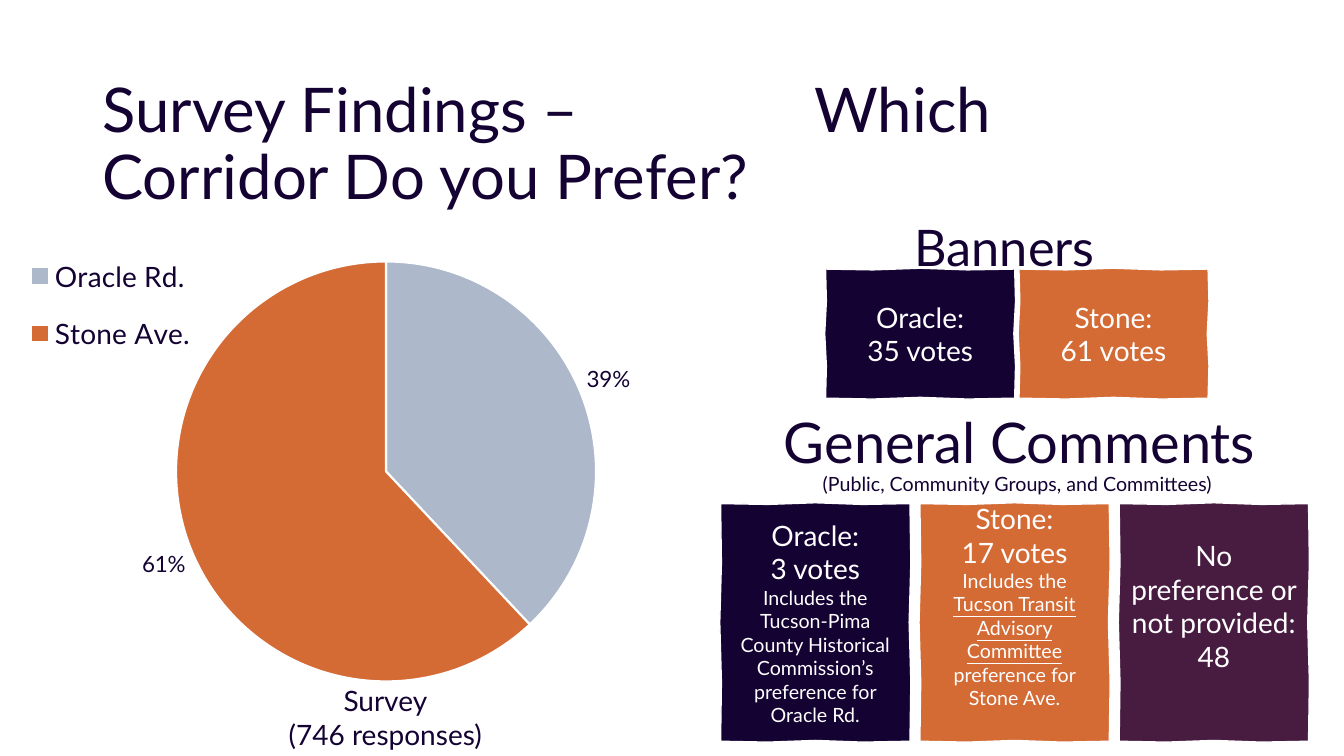
from lxml.etree import SubElement
from pptx import Presentation
from pptx.chart.data import CategoryChartData
from pptx.dml.color import RGBColor
from pptx.enum.chart import XL_CHART_TYPE, XL_LABEL_POSITION, XL_LEGEND_POSITION
from pptx.enum.text import MSO_ANCHOR, PP_ALIGN
from pptx.oxml import parse_xml
from pptx.oxml.ns import nsdecls, qn
from pptx.util import Pt

NAVY = RGBColor(0x14, 0x02, 0x33)
ORANGE = RGBColor(0xD4, 0x6A, 0x34)
PLUM = RGBColor(0x48, 0x1C, 0x41)
GREY_BLUE = RGBColor(0xAD, 0xB9, 0xCA)
WHITE = RGBColor(0xFF, 0xFF, 0xFF)
FONT = "Lato"


def style_font(font, size, color):
    font.name = FONT
    font.size = Pt(size)
    font.color.rgb = color


def add_run(paragraph, text, size, color, underline=False):
    run = paragraph.add_run()
    run.text = text
    style_font(run.font, size, color)
    if underline:
        run.font.underline = True


def fill_lines(frame, lines, color):
    for index, runs in enumerate(lines):
        paragraph = frame.paragraphs[0] if index == 0 else frame.add_paragraph()
        paragraph.alignment = PP_ALIGN.CENTER
        for text, *look in runs:
            first, *rest = text.split("\n")
            add_run(paragraph, first, look[0], color, *look[1:])
            for line in rest:
                paragraph.add_line_break()
                add_run(paragraph, line, look[0], color, *look[1:])


def add_title(slide, left, top, width, height):
    title = slide.shapes.title
    title.left, title.top = Pt(left), Pt(top)
    title.width, title.height = Pt(width), Pt(height)
    frame = title.text_frame
    frame.word_wrap = True
    frame.vertical_anchor = MSO_ANCHOR.MIDDLE
    paragraph = frame.paragraphs[0]
    paragraph.alignment = PP_ALIGN.LEFT
    paragraph.line_spacing = 0.9
    stops = SubElement(paragraph._p.get_or_add_pPr(), qn("a:tabLst"))
    SubElement(stops, qn("a:tab"), pos=str(Pt(508.5)), algn="l")
    add_run(paragraph, "Survey Findings –\tWhich Corridor Do you Prefer?", 44, NAVY)


def add_label(slide, left, top, width, height, lines, spacing=1.0):
    label = slide.shapes.add_textbox(Pt(left), Pt(top), Pt(width), Pt(height))
    label.text_frame.word_wrap = True
    fill_lines(label.text_frame, lines, NAVY)
    for paragraph in label.text_frame.paragraphs:
        paragraph.line_spacing = spacing


def set_layout(parent, following, part, chart_size, target=""):
    left, top, width, height = part
    chart_width, chart_height = chart_size
    for old in parent.findall(qn("c:layout")):
        parent.remove(old)
    parent.find(qn(following)).addprevious(parse_xml(
        f'<c:layout {nsdecls("c")}><c:manualLayout>{target}'
        '<c:xMode val="edge"/><c:yMode val="edge"/>'
        f'<c:x val="{left / chart_width}"/><c:y val="{top / chart_height}"/>'
        f'<c:w val="{width / chart_width}"/><c:h val="{height / chart_height}"/>'
        '</c:manualLayout></c:layout>'
    ))


def add_survey_pie(slide, left, top, width, height):
    votes = CategoryChartData(number_format="0%")
    votes.categories = ["Oracle Rd.", "Stone Ave."]
    votes.add_series("Series 1", (0.38, 0.62))
    chart = slide.shapes.add_chart(
        XL_CHART_TYPE.PIE, Pt(left), Pt(top), Pt(width), Pt(height), votes
    ).chart
    chart.has_title = False
    style_font(chart.font, 16, NAVY)
    chart.has_legend = True
    legend = chart.legend
    legend.position = XL_LEGEND_POSITION.RIGHT
    legend.include_in_layout = False
    style_font(legend.font, 20, NAVY)
    set_layout(legend._element, "c:overlay", (142, 1, 128, 98), (width, height))
    set_layout(chart._chartSpace.chart.plotArea, "c:pieChart",
               (252.5, 19, 300, 300), (width, height), '<c:layoutTarget val="inner"/>')
    survey = chart.plots[0]
    survey.vary_by_categories = True
    shares = survey.series[0].data_labels
    shares.show_value = True
    shares.number_format = "0%"
    shares.number_format_is_linked = False
    shares.position = XL_LABEL_POSITION.OUTSIDE_END
    style_font(shares.font, 16, NAVY)
    for index, (color, share) in enumerate(((GREY_BLUE, "39%"), (ORANGE, "61%"))):
        choice = survey.series[0].points[index]
        choice.format.fill.solid()
        choice.format.fill.fore_color.rgb = color
        choice.format.line.color.rgb = WHITE
        choice.format.line.width = Pt(1.5)
        share_label = choice.data_label
        add_run(share_label.text_frame.paragraphs[0], share, 16, NAVY)
        share_label.position = XL_LABEL_POSITION.OUTSIDE_END
    add_label(slide, left + 240, top + 317, 324, 55,
              [[("Survey", 20)], [("(746 responses)", 20)]])


def wavy_outline(left, top, width, height):
    corners = [(left, top), (left + width, top),
               (left + width, top + height), (left, top + height)]
    outline = []
    for side, (x, y) in enumerate(corners):
        end_x, end_y = corners[(side + 1) % 4]
        for step, shift in enumerate((0, 0.6, -0.6, 0.6)):
            along = step / 4
            across_x, across_y = (shift, 0) if side % 2 else (0, shift)
            outline.append((Pt(x + (end_x - x) * along + across_x),
                            Pt(y + (end_y - y) * along + across_y)))
    return outline


def add_vote_card(slide, left, top, width, height, color, lines, lift=0):
    outline = wavy_outline(left, top, width, height)
    builder = slide.shapes.build_freeform(*outline[0])
    builder.add_line_segments(outline[1:], close=True)
    card = builder.convert_to_shape()
    card.shadow.inherit = False
    card.fill.solid()
    card.fill.fore_color.rgb = color
    card.line.color.rgb = WHITE
    card.line.width = Pt(1)
    frame = card.text_frame
    frame.word_wrap = True
    frame.vertical_anchor = MSO_ANCHOR.MIDDLE
    frame.margin_left = frame.margin_right = Pt(8)
    frame.margin_top, frame.margin_bottom = Pt(0), Pt(lift)
    fill_lines(frame, lines, WHITE)


def add_card_row(slide, left, top, width, height, gap, cards):
    card_width = (width - gap * (len(cards) - 1)) / len(cards)
    for index, card in enumerate(cards):
        add_vote_card(slide, left + index * (card_width + gap), top,
                      card_width, height, *card)


def add_banners(slide, left, top, width, height):
    add_card_row(slide, left, top + 41.7, width, height - 41.7, 3, [
        (NAVY, [[("Oracle:\n35 votes", 20)]]),
        (ORANGE, [[("Stone:", 20)], [("61 votes", 20)]]),
    ])
    add_label(slide, left + 46, top, 164, 51, [[("Banners", 36)]])


def add_general_comments(slide, left, top, width, height):
    add_label(slide, left - 14.4, top, 456, 48, [[("General Comments", 40)]], 0.8)
    add_label(slide, left + 26, top + 36.2, 372, 24,
              [[("(Public, Community Groups, and Committees)", 14)]])
    historical = ("Includes the Tucson-Pima County Historical Commission’s "
                  "preference for Oracle Rd.")
    add_card_row(slide, left, top + 62.7, width, height - 62.7, 7, [
        (NAVY, [[("Oracle:\n3 votes", 20)], [(historical, 14)]]),
        (ORANGE, [[("Stone:", 20)], [("17 votes", 20)],
                  [("Includes the ", 14),
                   ("Tucson Transit Advisory Committee ", 14, True),
                   ("preference for Stone Ave.", 14)]], 24),
        (PLUM, [[("No preference or not provided: 48", 20)]], 24),
    ])


def main():
    deck = Presentation()
    deck.slide_width, deck.slide_height = Pt(960), Pt(540)
    slide = deck.slides.add_slide(deck.slide_layouts[5])
    add_title(slide, 66, 29, 670, 151)
    add_survey_pie(slide, -126.7, 167.8, 803.5, 338.4)
    add_banners(slide, 589.7, 150.5, 273.3, 134)
    add_general_comments(slide, 514.7, 297, 420, 232.5)
    deck.save("out.pptx")


if __name__ == "__main__":
    main()
